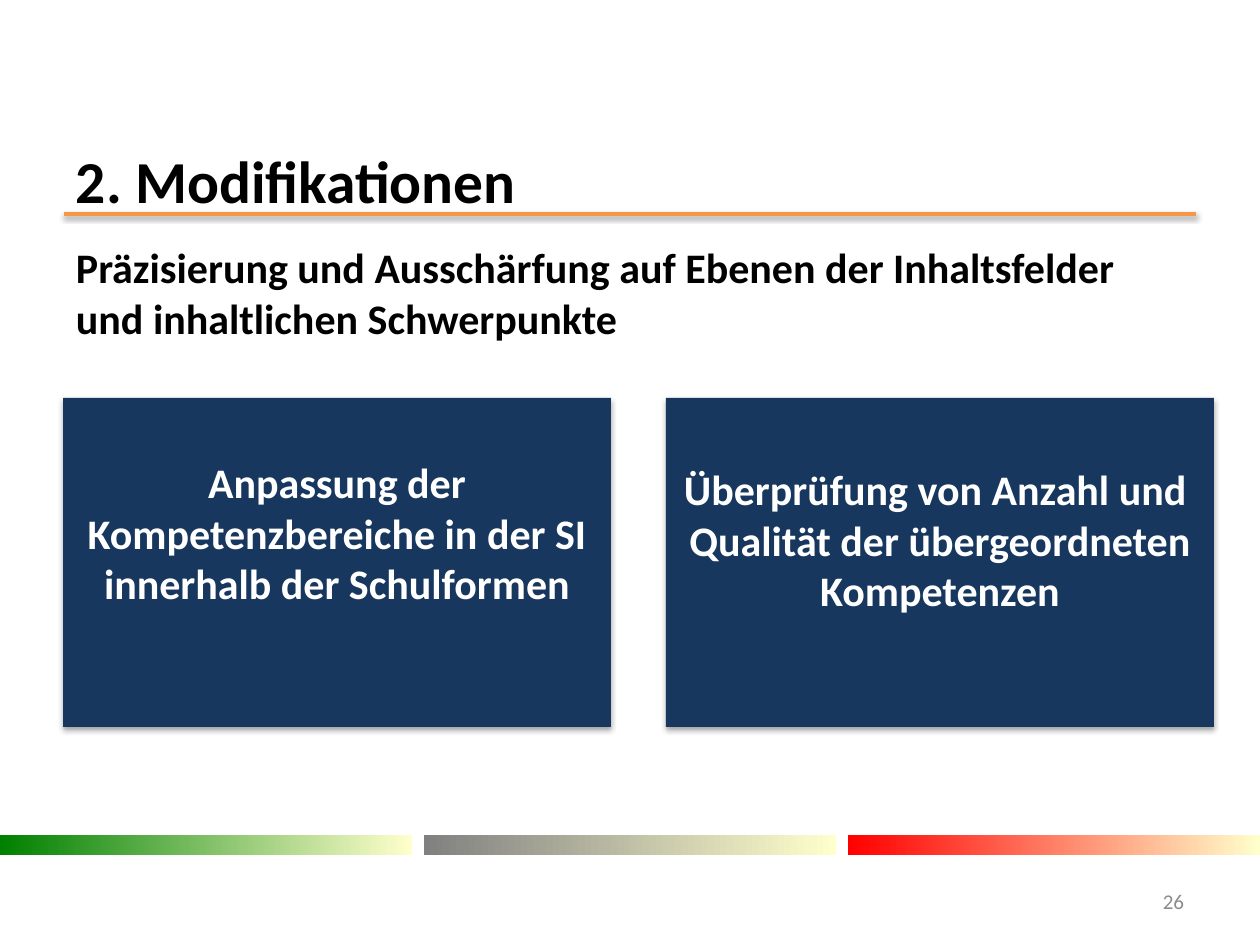
from lxml import etree
from pptx import Presentation
from pptx.dml.color import RGBColor
from pptx.enum.shapes import MSO_CONNECTOR, MSO_SHAPE
from pptx.enum.text import MSO_ANCHOR, PP_ALIGN
from pptx.oxml.ns import qn
from pptx.util import Emu, Pt

EMU_PER_PX = 914400 // 126
LEFT, CENTER, RIGHT = PP_ALIGN.LEFT, PP_ALIGN.CENTER, PP_ALIGN.RIGHT
TOP, MIDDLE = MSO_ANCHOR.TOP, MSO_ANCHOR.MIDDLE
RECTANGLE = MSO_SHAPE.RECTANGLE
STRAIGHT = MSO_CONNECTOR.STRAIGHT
FONT = "Calibri"


def px(value):
    return Emu(value * EMU_PER_PX)


def color(value):
    return RGBColor.from_string(value)


def write_text(shape, paragraphs, size=24, fill="000000", bold=True,
               align=LEFT, anchor=MIDDLE, margins=(13, 6, 13, 6)):
    frame = shape.text_frame
    frame.word_wrap = True
    frame.vertical_anchor = anchor
    (frame.margin_left, frame.margin_top,
     frame.margin_right, frame.margin_bottom) = map(px, margins)
    for index, text in enumerate(paragraphs):
        paragraph = frame.paragraphs[0] if index == 0 else frame.add_paragraph()
        paragraph.alignment = align
        run = paragraph.add_run()
        run.text = text
        run.font.name = FONT
        run.font.size = Pt(size)
        run.font.bold = bold
        run.font.color.rgb = color(fill)


def add_text(slide, box, text, **text_format):
    write_text(slide.shapes.add_textbox(*map(px, box)), [text], **text_format)


def add_rectangle(slide, box):
    shape = slide.shapes.add_shape(RECTANGLE, *map(px, box))
    shape.shadow.inherit = False
    shape.line.fill.background()
    return shape


def add_shadow(effects, distance, opacity):
    shadow = etree.SubElement(
        effects, qn("a:outerShdw"), blurRad=str(Pt(3.1)),
        dist=str(Pt(distance)), dir="5400000", rotWithShape="0")
    black = etree.SubElement(shadow, qn("a:srgbClr"), val="000000")
    etree.SubElement(black, qn("a:alpha"), val=str(opacity * 1000))


def add_header(slide, box):
    left, top, width, height = box
    add_text(slide, box, "2. Modifikationen", size=34)
    rule_y = top + height + 10
    rule = slide.shapes.add_connector(
        STRAIGHT, px(left + 1), px(rule_y), px(left + width - 1), px(rule_y))
    rule.line.color.rgb = color("F79646")
    rule.line.width = Pt(2)
    effects = etree.SubElement(rule._element.spPr, qn("a:effectLst"))
    add_shadow(effects, distance=1.6, opacity=38)


def add_card(slide, box, paragraphs, lift):
    """A card whose text sits `lift` px above its middle."""
    card = add_rectangle(slide, box)
    card.fill.solid()
    card.fill.fore_color.rgb = color("17375E")
    add_shadow(card._element.spPr.find(qn("a:effectLst")),
               distance=1.8, opacity=35)
    write_text(card, paragraphs, fill="FFFFFF", align=CENTER,
               margins=(13, 13, 13, 13 + 2 * lift))


def add_footer(slide, box):
    left, top, width, height = box
    # Colour bars
    bar_width = 412
    step = (width - bar_width) // 2
    for index, start in enumerate(("008000", "808080", "FF0000")):
        bar = add_rectangle(slide, (left + index * step, top, bar_width, 20))
        bar.fill.gradient()
        bar.fill.gradient_angle = 0
        for stop, value in zip(bar.fill.gradient_stops, (start, "FFFFCC")):
            stop.color.rgb = color(value)
    # Page number
    add_text(slide, (left + width - 144, top + 41, 81, height - 41), "26",
             size=12, fill="8C8C8C", bold=False, align=RIGHT)


def main():
    presentation = Presentation()
    presentation.slide_width = px(1260)
    presentation.slide_height = px(945)
    slide = presentation.slides.add_slide(presentation.slide_layouts[6])

    add_header(slide, (63, 155, 1134, 49))
    add_text(slide, (63, 236, 1134, 115),
             "Präzisierung und Ausschärfung auf Ebenen der Inhaltsfelder "
             "und inhaltlichen Schwerpunkte", anchor=TOP)

    cards = [
        (["Anpassung der Kompetenzbereiche in der SI "
          "innerhalb der Schulformen"], 30),
        (["Überprüfung von Anzahl und ",
          "Qualität der übergeordneten Kompetenzen"], 23),
    ]
    for index, (paragraphs, lift) in enumerate(cards):
        add_card(slide, (63 + index * 603, 398, 548, 329), paragraphs, lift)

    add_footer(slide, (0, 835, 1260, 91))
    presentation.save("out.pptx")


if __name__ == "__main__":
    main()
